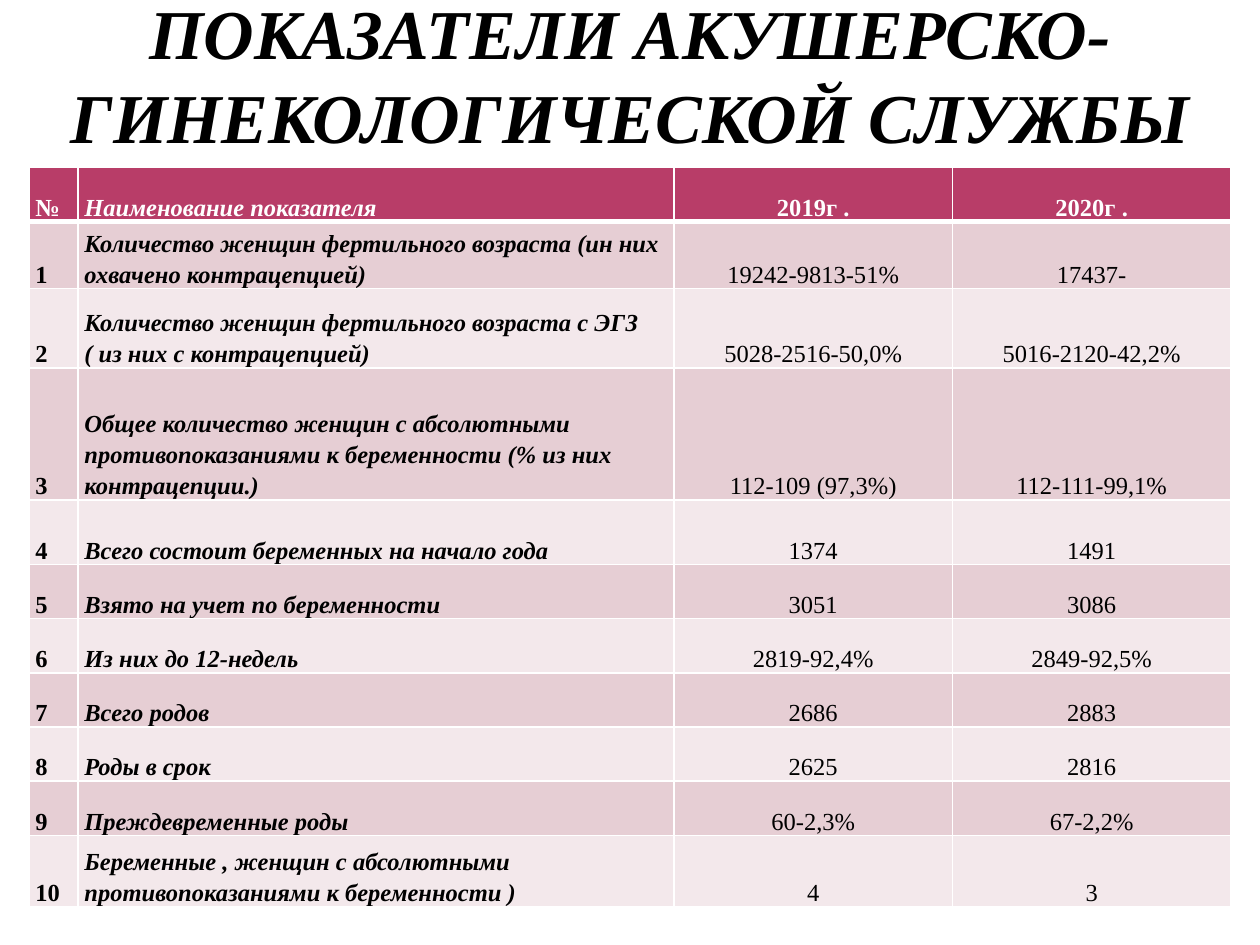
from dataclasses import dataclass

from lxml.etree import SubElement
from pptx import Presentation
from pptx.dml.color import RGBColor
from pptx.enum.text import MSO_ANCHOR as Anchor, MSO_AUTO_SIZE as AutoSize, PP_ALIGN as Align
from pptx.oxml.ns import qn
from pptx.util import Inches, Pt


@dataclass(frozen=True)
class Theme:
    font: str = "Times New Roman"
    title_size: int = 40
    table_size: int = 14
    text: str = "000000"
    title_outline: str = "5E1A50"
    header_text: str = "FFFFFF"
    header_fill: str = "B83D68"
    band_fills: tuple = ("E6CED4", "F3E8EB")
    border: str = "FFFFFF"


TITLE = "ПОКАЗАТЕЛИ АКУШЕРСКО-ГИНЕКОЛОГИЧЕСКОЙ СЛУЖБЫ"
HEADER = ("№", "Наименование показателя", "2019г .", "2020г .")
INDICATORS = (
    ("Количество женщин фертильного возраста (ин них охвачено контрацепцией)",
     "19242-9813-51%", "17437-"),
    ("Количество женщин фертильного возраста с ЭГЗ ( из них с контрацепцией)",
     "5028-2516-50,0%", "5016-2120-42,2%"),
    ("Общее количество женщин с абсолютными противопоказаниями к беременности "
     "(% из них контрацепции.)", "112-109 (97,3%)", "112-111-99,1%"),
    ("Всего состоит беременных на начало года", "1374", "1491"),
    ("Взято на учет по беременности", "3051", "3086"),
    ("Из них до 12-недель", "2819-92,4%", "2849-92,5%"),
    ("Всего родов", "2686", "2883"),
    ("Роды в срок", "2625", "2816"),
    ("Преждевременные роды", "60-2,3%", "67-2,2%"),
    ("Беременные , женщин с абсолютными противопоказаниями к беременности )", "4", "3"),
)
COLUMN_WIDTHS = (0.39, 4.73, 2.21, 2.21)
ROW_HEIGHTS = (0.43, 0.53, 0.63, 1.05, 0.51, *[0.43] * 5, 0.57)


class SlideBuilder:
    def __init__(self, slide, theme):
        self.slide = slide
        self.theme = theme

    def style_font(self, font, size, color, bold=False, italic=False):
        font.name = self.theme.font
        font.size = Pt(size)
        font.bold = bold
        font.italic = italic
        font.color.rgb = RGBColor.from_string(color)

    def add_line(self, parent, tag, color, width):
        """Append a solid line element, such as a cell border or a text outline."""
        line = SubElement(parent, qn(tag), w=str(Pt(width)))
        fill = SubElement(line, qn("a:solidFill"))
        SubElement(fill, qn("a:srgbClr"), val=color)
        return line

    def add_title(self, text, left, top, width, height):
        title = self.slide.shapes.title
        title.left, title.top = Inches(left), Inches(top)
        title.width, title.height = Inches(width), Inches(height)
        frame = title.text_frame
        frame.text = text
        frame.word_wrap = True
        frame.auto_size = AutoSize.NONE
        frame.vertical_anchor = Anchor.BOTTOM
        frame.margin_left = frame.margin_right = Inches(0.05)
        frame.margin_top = frame.margin_bottom = 0
        paragraph = frame.paragraphs[0]
        paragraph.alignment = Align.CENTER
        self.style_font(paragraph.font, self.theme.title_size, self.theme.text, True, True)
        run_properties = paragraph.runs[0].font._element
        self.add_line(run_properties, "a:ln", self.theme.title_outline, 0.04)

    def add_table(self, rows, left, top, column_widths, row_heights):
        frame = self.slide.shapes.add_table(
            len(rows), len(column_widths), Inches(left), Inches(top),
            Inches(sum(column_widths)), Inches(sum(row_heights)))
        table = frame.table
        table.horz_banding = False
        for column, width in zip(table.columns, column_widths):
            column.width = Inches(width)
        for row, height in zip(table.rows, row_heights):
            row.height = Inches(height)
        for row_index, values in enumerate(rows):
            for column_index, value in enumerate(values):
                self.fill_cell(table.cell(row_index, column_index), value,
                               row_index, column_index)

    def fill_cell(self, cell, value, row_index, column_index):
        theme = self.theme
        is_header = row_index == 0
        is_value = column_index >= 2
        cell.text = value
        cell.vertical_anchor = Anchor.BOTTOM
        cell.margin_left = cell.margin_right = Inches(0 if is_value else 0.05)
        cell.margin_top = Inches(0 if is_value else 0.01)
        cell.margin_bottom = 0

        paragraph = cell.text_frame.paragraphs[0]
        paragraph.alignment = Align.CENTER if is_value else Align.LEFT
        paragraph.line_spacing = 1.15
        paragraph.space_after = Pt(10)
        self.style_font(paragraph.font, theme.table_size,
                        theme.header_text if is_header else theme.text,
                        bold=is_header or not is_value, italic=column_index == 1)

        properties = cell._tc.get_or_add_tcPr()
        for side in "LRTB":
            thick = (is_header and side == "B") or (row_index == 1 and side == "T")
            self.add_line(properties, f"a:ln{side}", theme.border, 3 if thick else 1)
        fill = theme.header_fill if is_header else theme.band_fills[(row_index - 1) % 2]
        cell.fill.solid()
        cell.fill.fore_color.rgb = RGBColor.from_string(fill)


def main():
    presentation = Presentation()
    presentation.slide_width, presentation.slide_height = Inches(10), Inches(7.5)
    slide = presentation.slides.add_slide(presentation.slide_layouts[5])
    builder = SlideBuilder(slide, Theme())
    builder.add_title(TITLE, 0.5, 0.31, 9, 0.94)
    numbered = [(str(number), *row) for number, row in enumerate(INDICATORS, start=1)]
    builder.add_table([HEADER, *numbered], 0.23, 1.33, COLUMN_WIDTHS, ROW_HEIGHTS)
    presentation.save("out.pptx")


if __name__ == "__main__":
    main()
